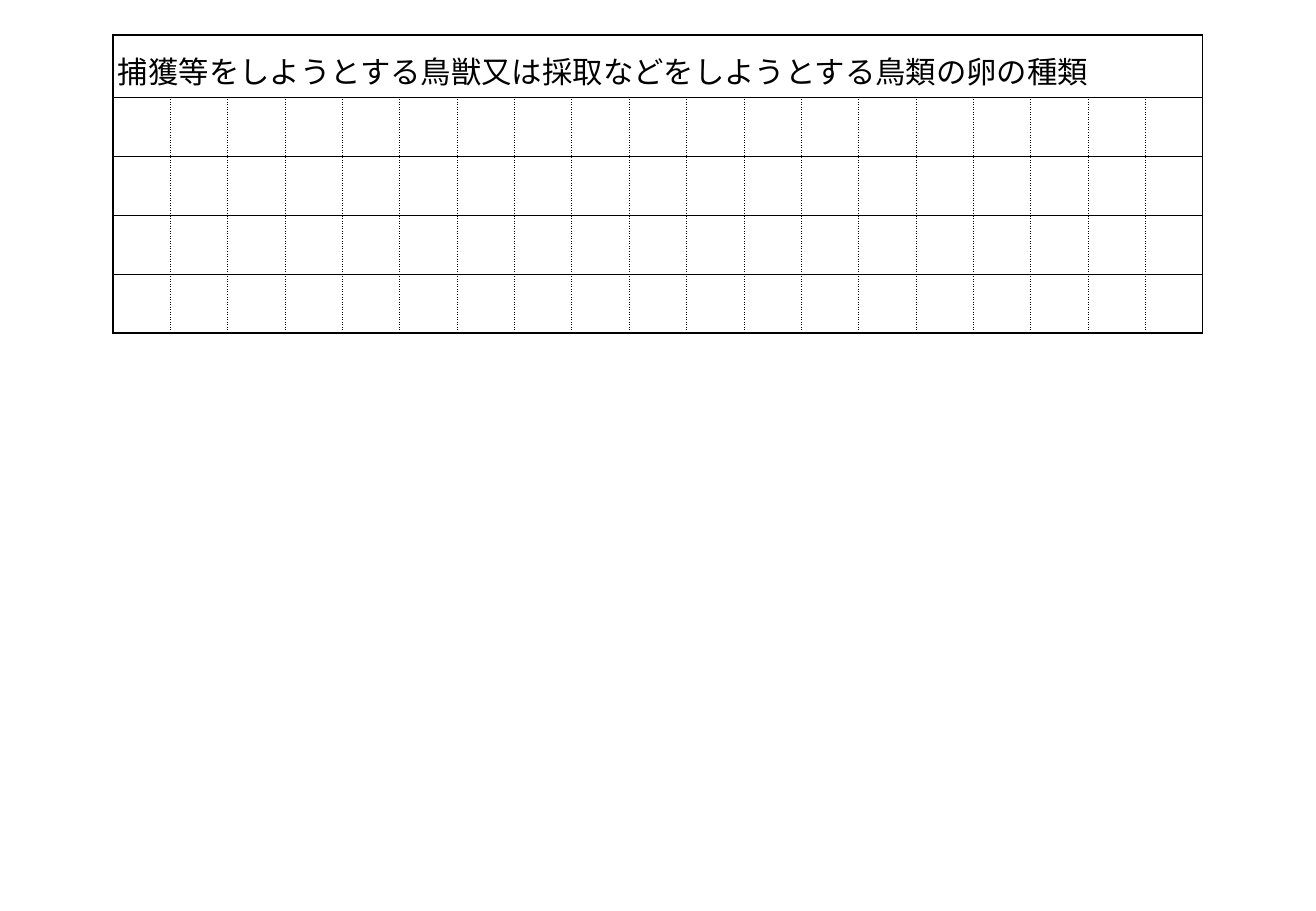
from dataclasses import dataclass

from lxml import etree
from pptx import Presentation
from pptx import util as u
from pptx.dml.color import RGBColor
from pptx.enum import text
from pptx.oxml.ns import qn

PX = u.Inches(1) / 121.5


@dataclass(frozen=True)
class Theme:
    font: str = "Noto Sans CJK JP"
    ink: str = "000000"
    heading_size: int = 18
    solid: tuple = (1, "solid")
    dotted: tuple = (0.5, "sysDot")


THEME = Theme()


def px(length):
    return u.Emu(round(length * PX))


def add_borders(cell, **edges):
    """Draw cell edges, given as L, R, T, B = (points, dash), in that order."""
    properties = cell._tc.get_or_add_tcPr()
    for side, (width, dash) in edges.items():
        line = etree.SubElement(properties, qn(f"a:ln{side}"), w=str(u.Pt(width)))
        fill = etree.SubElement(line, qn("a:solidFill"))
        etree.SubElement(fill, qn("a:srgbClr"), val=THEME.ink)
        etree.SubElement(line, qn("a:prstDash"), val=dash)


prs = Presentation()
prs.slide_width, prs.slide_height = px(1316), px(911)
slide = prs.slides.add_slide(prs.slide_layouts[6])

LEFT, TOP, WIDTH = 113, 35, 1090
COLUMNS = 19
ROW_HEIGHTS = [62] + [59] * 4
LAST = COLUMNS - 1

species_form = slide.shapes.add_table(
    len(ROW_HEIGHTS), COLUMNS, px(LEFT), px(TOP), px(WIDTH), px(sum(ROW_HEIGHTS))
).table
species_form.first_row = False
species_form.horz_banding = False
for column in species_form.columns:
    column.width = px(WIDTH / COLUMNS)

for r, height in enumerate(ROW_HEIGHTS):
    species_form.rows[r].height = px(height)
    for c in range(COLUMNS):
        cell = species_form.cell(r, c)
        cell.margin_left = cell.margin_right = px(5)
        cell.margin_top = cell.margin_bottom = px(5)
        cell.vertical_anchor = text.MSO_ANCHOR.MIDDLE
        add_borders(
            cell,
            L=THEME.solid if r == 0 or c == 0 else THEME.dotted,
            R=THEME.solid if r == 0 or c == LAST else THEME.dotted,
            T=THEME.solid,
            B=THEME.solid,
        )
        cell.fill.background()

heading = species_form.cell(0, 0)
heading.merge(species_form.cell(0, LAST))
heading.text = "捕獲等をしようとする鳥獣又は採取などをしようとする鳥類の卵の種類"
paragraph = heading.text_frame.paragraphs[0]
paragraph.line_spacing = 1.19
paragraph.space_after = u.Pt(6)
paragraph.font.size = u.Pt(THEME.heading_size)
paragraph.font.color.rgb = RGBColor.from_string(THEME.ink)
paragraph.font.name = THEME.font
defaults = paragraph._p.pPr.find(qn("a:defRPr"))
etree.SubElement(defaults, qn("a:ea"), typeface=THEME.font)

prs.save("out.pptx")
